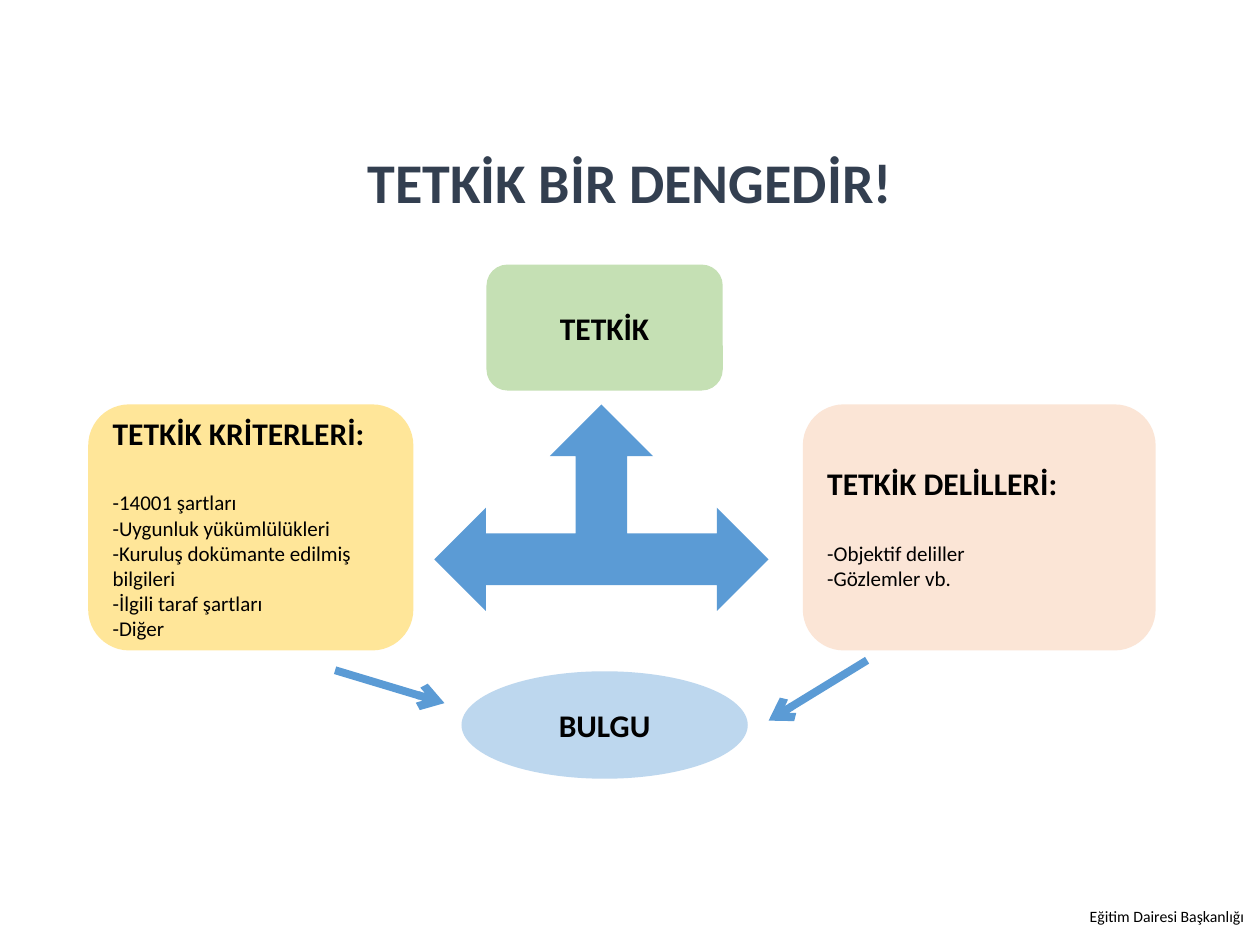
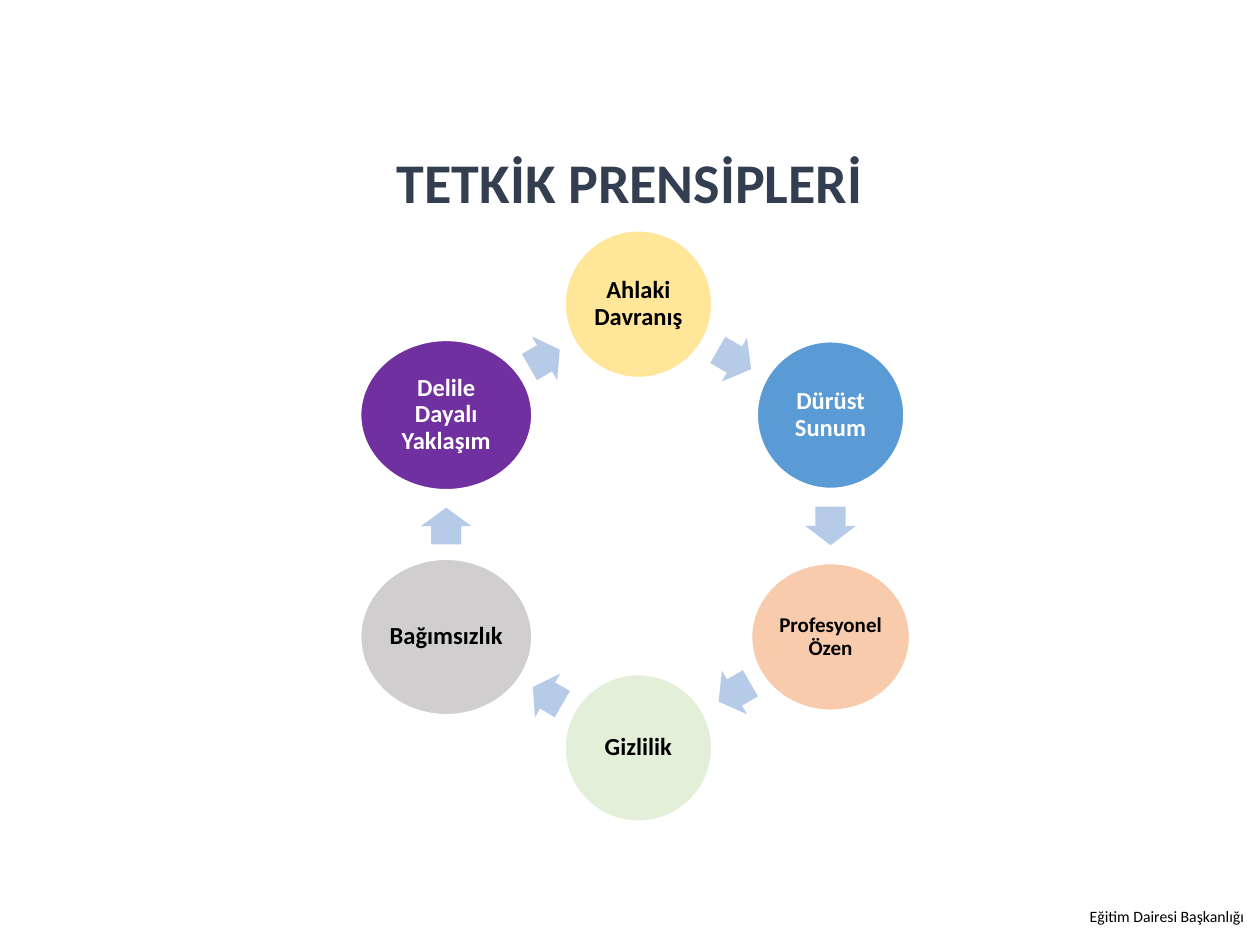
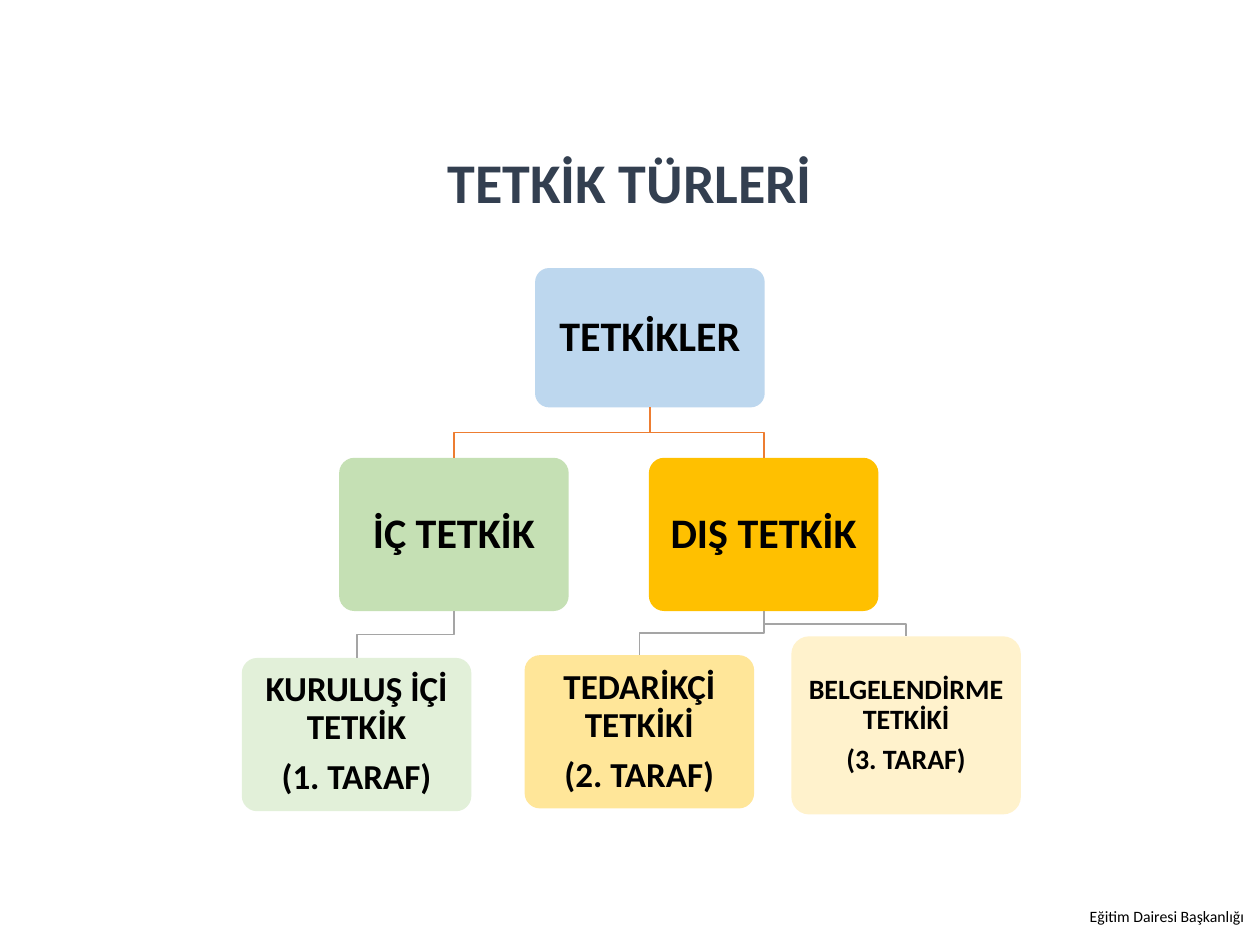
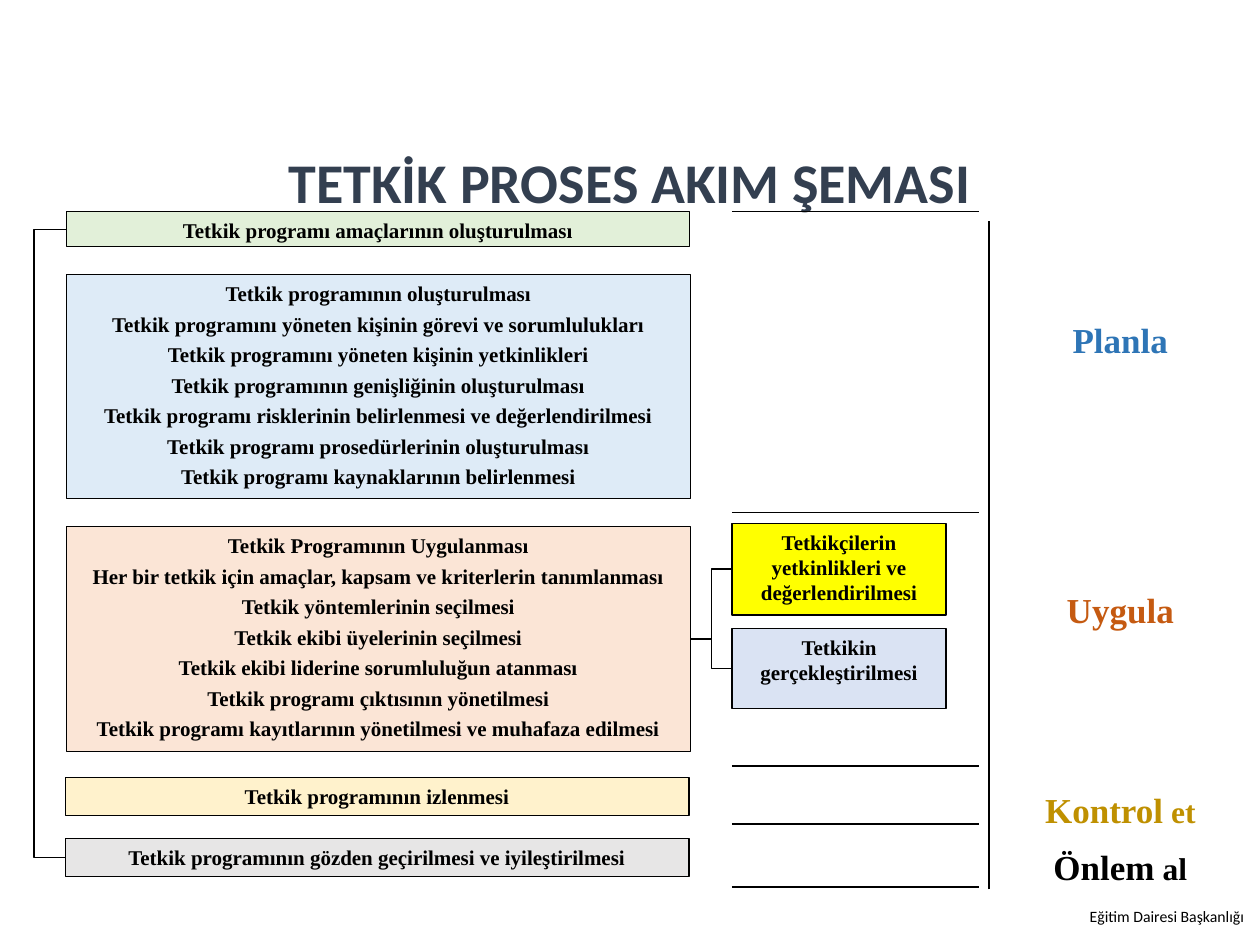
from math import cos, radians, sin

from pptx import Presentation
from pptx.dml.color import RGBColor
from pptx.enum.shapes import MSO_CONNECTOR as CXN, MSO_SHAPE as SHAPE
from pptx.enum.text import MSO_ANCHOR as ANCHOR, PP_ALIGN as ALIGN
from pptx.oxml.ns import qn
from pptx.oxml.xmlchemy import OxmlElement
from pptx.util import Pt


class Theme:
    sans, serif = "Calibri", "Times New Roman"
    black, white, navy = "000000", "FFFFFF", "333F50"
    blue, sky, ice, arrow = "5B9BD5", "BDD7EE", "DEEBF7", "B5CBE7"
    periwinkle, purple = "DAE3F3", "7030A0"
    green, mint = "C5E0B4", "E2F0D9"
    gold, sand, cream, yellow = "FFC000", "FFE699", "FFF2CC", "FFFF00"
    orange, salmon, peach = "ED7D31", "F8CBAD", "FBE5D6"
    gray, silver, smoke = "A5A5A5", "D0CECE", "E7E6E6"
    plan, do, check = "2E75B6", "C55A11", "BF9000"
    title, big, node, head, leaf, ring, body, footer = 32, 24, 20, 18, 16, 14, 12, 9


T = Theme


def add_box(slide, kind, at, paras=(), fill=None, line=None, width=0.75, size=T.head,
            color=T.black, font=T.sans, bold=True, align=ALIGN.CENTER,
            anchor=ANCHOR.MIDDLE, margins=(7.2, 3.6), gap=0, spacing=1.0):
    """Add a preset shape, or a text box when kind is None.

    A paragraph is a string or a list of (text, font values) runs.
    """
    at = [Pt(v) for v in at]
    if kind is None:
        sp = slide.shapes.add_textbox(*at)
    else:
        sp = slide.shapes.add_shape(kind, *at)
        sp.shadow.inherit = False
        if fill:
            sp.fill.solid()
            sp.fill.fore_color.rgb = RGBColor.from_string(fill)
        if line:
            sp.line.color.rgb = RGBColor.from_string(line)
            sp.line.width = Pt(width)
        else:
            sp.line.fill.background()
    tf = sp.text_frame
    side, top = (Pt(m) for m in margins)
    frame = dict(word_wrap=True, vertical_anchor=anchor, margin_left=side,
                 margin_right=side, margin_top=top, margin_bottom=top)
    for name, value in frame.items():
        setattr(tf, name, value)
    for i, runs in enumerate(paras):
        p = tf.add_paragraph() if i else tf.paragraphs[0]
        p.alignment, p.line_spacing = align, spacing
        if i and gap:
            p.space_before = Pt(gap)
        for text, own in [(runs, {})] if isinstance(runs, str) else runs:
            r = p.add_run()
            r.text = text
            fmt = dict(name=font, size=Pt(size), bold=bold) | own
            for name, value in fmt.items():
                setattr(r.font, name, value)
            r.font.color.rgb = RGBColor.from_string(color)
    return sp


def add_line(slide, ends=(0, 0, 0, 0), color=T.black, width=0.75, kind=CXN.STRAIGHT):
    c = slide.shapes.add_connector(kind, *[Pt(v) for v in ends])
    c.line.color.rgb = RGBColor.from_string(color)
    c.line.width = Pt(width)
    c._element.spPr.append(OxmlElement("a:effectLst"))
    return c


prs = Presentation()
prs.slide_width, prs.slide_height = Pt(720), Pt(540)

slides = []
for title in ("TETKİK BİR DENGEDİR!", "TETKİK PRENSİPLERİ", "TETKİK TÜRLERİ",
              "TETKİK PROSES AKIM ŞEMASI"):
    s = prs.slides.add_slide(prs.slide_layouts[6])
    add_box(s, None, (615.6, 514.8, 104.4, 18), ["Eğitim Dairesi Başkanlığı"],
            size=T.footer, bold=False, align=ALIGN.LEFT, anchor=ANCHOR.TOP)
    add_box(s, None, (49.7, 78.5, 620.6, 54.7), [title], size=T.title,
            color=T.navy, spacing=0.9)
    slides.append(s)
balance, principles, types, flow = slides

# Balance of criteria and evidence
add_box(balance, SHAPE.LEFT_RIGHT_UP_ARROW, (248.2, 231.1, 191, 118), fill=T.blue)
add_box(balance, SHAPE.ROUNDED_RECTANGLE, (278, 151.2, 135, 72), ["TETKİK"], T.green)
add_box(balance, SHAPE.OVAL, (263.7, 383.6, 163.6, 61.4), ["BULGU"], T.sky)

cards = [
    (50.4, 185.8, T.sand, "TETKİK KRİTERLERİ:",
     ["-14001 şartları", "-Uygunluk yükümlülükleri",
      "-Kuruluş dokümante edilmiş bilgileri", "-İlgili taraf şartları", "-Diğer"]),
    (458.8, 201.6, T.peach, "TETKİK DELİLLERİ:",
     ["-Objektif deliller", "-Gözlemler vb."]),
]
for x, w, fill, head, items in cards:
    paras = [head] + [[(t, dict(size=Pt(T.body), bold=False))] for t in items]
    sp = add_box(balance, SHAPE.ROUNDED_RECTANGLE, (x, 231.1, w, 140.6), paras, fill,
                 align=ALIGN.LEFT)
    sp.text_frame.paragraphs[1].space_before = Pt(22)

for ends in ((191.5, 383, 254, 401.8), (495.5, 377.3, 439.2, 411.8)):
    c = add_line(balance, ends, T.blue, 4.5)
    tail = OxmlElement("a:tailEnd")
    tail.set("type", "arrow")
    c.line._get_or_add_ln().append(tail)

# Ring of principles: text, width, height, fill, text colour, size, arrow length and shift
ring = [
    ("Ahlaki Davranış", 84, 84, T.sand, T.black, T.ring, 22, 0),
    ("Dürüst Sunum", 84, 84, T.blue, T.white, T.ring, 22, 0),
    ("Profesyonel Özen", 90.5, 84, T.salmon, T.black, T.body, 21, 0),
    ("Gizlilik", 84, 84, T.mint, T.black, T.ring, 19.5, -3.5),
    ("Bağımsızlık", 98, 89, T.silver, T.black, T.ring, 21, 0),
    ("Delile Dayalı Yaklaşım", 98, 85.5, T.purple, T.white, T.ring, 20, 1.5),
]
cx, cy, radius, arrow_h = 364.8, 300.6, 126.8, 28.8
arrow_radius = radius * cos(radians(30))
for i, (text, w, h, fill, color, size, length, shift) in enumerate(ring):
    a = radians(60 * i)
    x, y = cx + radius * sin(a), cy - radius * cos(a)
    add_box(principles, SHAPE.OVAL, (x - w / 2, y - h / 2, w, h), [text], fill, T.white, 1,
            size=size, color=color, margins=(1.44, 1.44), spacing=0.9)
    turn = 60 * i + 30
    a = radians(turn)
    x = cx + arrow_radius * sin(a) + shift * cos(a)
    y = cy - arrow_radius * cos(a) + shift * sin(a)
    sp = add_box(principles, SHAPE.RIGHT_ARROW,
                 (x - length / 2, y - arrow_h / 2, length, arrow_h), fill=T.arrow)
    sp.adjustments[0], sp.adjustments[1] = 0.6, 0.5
    sp.rotation = turn

# Tree of audit types: parent, centre, top, height, fill, size, margin, text
tree = [
    (None, 371.4, 153.2, 79.6, T.sky, T.big, 7.2, ["TETKİKLER"]),
    (0, 436.4, 261.6, 87.6, T.gold, T.big, 7.2, ["DIŞ TETKİK"]),
    (0, 259.4, 261.6, 87.6, T.green, T.big, 7.2, ["İÇ TETKİK"]),
    (1, 517.8, 363.6, 101.8, T.cream, T.leaf, 5, ["BELGELENDİRME TETKİKİ", "(3. TARAF)"]),
    (1, 365.4, 374.4, 87.6, T.sand, T.node, 6, ["TEDARİKÇİ TETKİKİ", "(2. TARAF)"]),
    (2, 203.8, 376, 87.6, T.mint, T.node, 6, ["KURULUŞ İÇİ TETKİK", "(1. TARAF)"]),
]
node_w = 131.2
for parent, x, y, h, fill, size, margin, text in tree:
    sp = add_box(types, SHAPE.ROUNDED_RECTANGLE, (x - node_w / 2, y, node_w, h), text, fill,
                 size=size, margins=(margin, margin), gap=0.35 * size, spacing=0.9)
    sp.adjustments[0] = 0.1
    if parent is None:
        continue
    px, py, ph = tree[parent][1:4]
    bottom = py + ph
    mid = (bottom + y) / 2
    branch = types.shapes.build_freeform(Pt(px), Pt(bottom))
    branch.add_line_segments([(Pt(px), Pt(mid)), (Pt(x), Pt(mid)), (Pt(x), Pt(y))],
                             close=False)
    sp = branch.convert_to_shape()
    sp.shadow.inherit = False
    sp.fill.background()
    sp.line.color.rgb = RGBColor.from_string(T.gray if parent else T.orange)
    sp.line.width = Pt(1)

# Process flow
steps = [
    (38, 121, 356, 20, T.mint, ["Tetkik programı amaçlarının oluşturulması"]),
    (38, 157, 356.5, 128, T.ice, [
        "Tetkik programının oluşturulması",
        "Tetkik programını yöneten kişinin görevi ve sorumlulukları",
        "Tetkik programını yöneten kişinin yetkinlikleri",
        "Tetkik programının genişliğinin oluşturulması",
        "Tetkik programı risklerinin belirlenmesi ve değerlendirilmesi",
        "Tetkik programı prosedürlerinin oluşturulması",
        "Tetkik programı kaynaklarının belirlenmesi"]),
    (38, 301, 356.5, 128.5, T.peach, [
        "Tetkik Programının Uygulanması",
        "Her bir tetkik için amaçlar, kapsam ve kriterlerin tanımlanması",
        "Tetkik yöntemlerinin seçilmesi",
        "Tetkik ekibi üyelerinin seçilmesi",
        "Tetkik ekibi liderine sorumluluğun atanması",
        "Tetkik programı çıktısının yönetilmesi",
        "Tetkik programı kayıtlarının yönetilmesi ve muhafaza edilmesi"]),
    (37.25, 444.3, 356.5, 21.6, T.cream, ["Tetkik programının izlenmesi"]),
    (37.25, 479.3, 356.5, 21.6, T.smoke,
     ["Tetkik programının gözden geçirilmesi ve iyileştirilmesi"]),
    (418.3, 299, 122.4, 52.5, T.yellow, ["Tetkikçilerin yetkinlikleri ve değerlendirilmesi"]),
    (418.3, 359.2, 122.4, 45.5, T.periwinkle, ["Tetkikin gerçekleştirilmesi"]),
]
boxes = [add_box(flow, SHAPE.RECTANGLE, at, text, fill, T.black, size=T.body, font=T.serif,
                 anchor=ANCHOR.TOP, gap=3)
         for *at, fill, text in steps]
goals, _, work, _, review, auditors, audit = boxes

for start, start_side, end in ((goals, 1, review), (work, 3, auditors), (work, 3, audit)):
    c = add_line(flow, kind=CXN.ELBOW)
    c.begin_connect(start, start_side)
    c.end_connect(end, 1)
    if start is goals:
        gd = OxmlElement("a:gd")
        gd.set("name", "adj1")
        gd.set("fmla", "val 2500000")
        c._element.spPr.find(".//" + qn("a:avLst")).append(gd)

for y in (121, 293, 437.8, 470.9, 506.9):
    add_line(flow, (418.3, y, 559.4, y))
add_line(flow, (565.2, 508.3, 565.2, 126))

small = dict(size=Pt(T.head))
phases = [
    (178.6, T.plan, "Planla"),
    (332.6, T.do, "Uygula"),
    (447.1, T.check, [("Kontrol", {}), (" et", small)]),
    (479.5, T.black, [("Önlem", {}), (" al", small)]),
]
for y, color, text in phases:
    add_box(flow, None, (579, y, 122.4, 23), [text], size=T.node, color=color,
            font=T.serif, anchor=ANCHOR.TOP)

prs.save("out.pptx")
